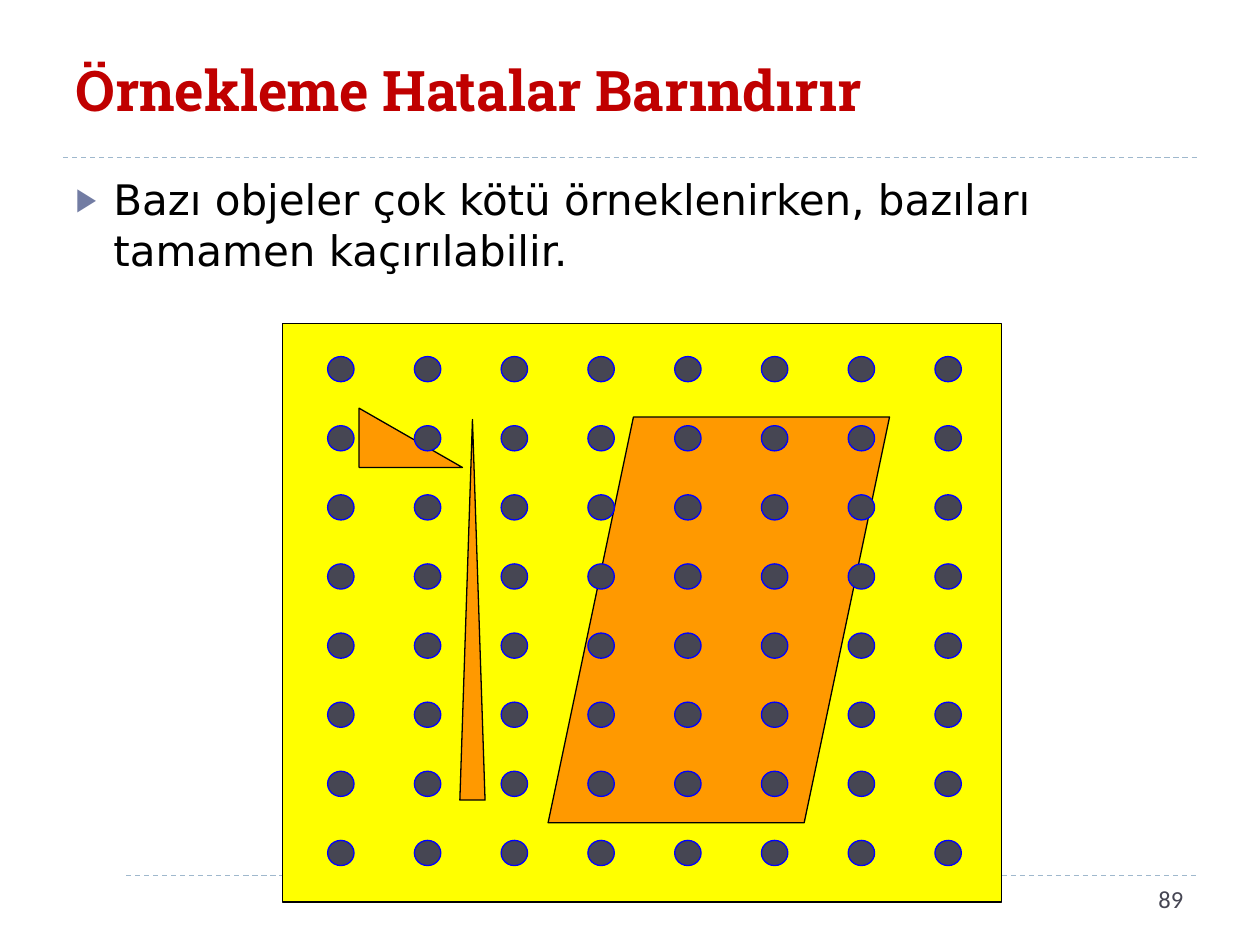
from itertools import product

from lxml import etree
from pptx import Presentation
from pptx.dml.color import RGBColor
from pptx.enum.dml import MSO_LINE
from pptx.enum.shapes import MSO_CONNECTOR, MSO_SHAPE
from pptx.enum.text import MSO_ANCHOR, MSO_AUTO_SIZE, PP_ALIGN
from pptx.oxml.ns import qn
from pptx.util import Inches, Pt

LEFT, RIGHT = PP_ALIGN.LEFT, PP_ALIGN.RIGHT
TOP, MIDDLE = MSO_ANCHOR.TOP, MSO_ANCHOR.MIDDLE
NO_FIT = MSO_AUTO_SIZE.NONE
STRAIGHT = MSO_CONNECTOR.STRAIGHT
DASH = MSO_LINE.DASH
RECT = MSO_SHAPE.RECTANGLE
RIGHT_TRI = MSO_SHAPE.RIGHT_TRIANGLE
TRI = MSO_SHAPE.ISOSCELES_TRIANGLE
SLANT = MSO_SHAPE.PARALLELOGRAM
OVAL = MSO_SHAPE.OVAL

COLORS = {
    "title": "C00000",
    "text": "000000",
    "number": "464653",
    "bullet": "727CA3",
    "rule": "9FB8CD",
    "field": "FFFF00",
    "object": "FF9900",
    "edge": "000000",
    "dot": "464653",
    "ring": "0000FF",
}


def color(name):
    return RGBColor.from_string(COLORS[name])


def place(shape, *box):
    shape.left, shape.top, shape.width, shape.height = map(Inches, box)


def set_text(shape, text, font, size, hue, bold=False, align=LEFT, anchor=TOP):
    frame = shape.text_frame
    frame.text = text
    frame.word_wrap = True
    frame.auto_size = NO_FIT
    frame.vertical_anchor = anchor
    para = frame.paragraphs[0]
    para.alignment = align
    para.space_before = Pt(0)
    face = para.runs[0].font
    face.name, face.size, face.bold = font, Pt(size), bold
    face.color.rgb = color(hue)
    return para


def add_bullet(para, char, hue, percent, indent):
    props = para._p.get_or_add_pPr()
    props.set("marL", str(Inches(indent)))
    props.set("indent", str(-Inches(indent)))
    tint = etree.SubElement(props, qn("a:buClr"))
    etree.SubElement(tint, qn("a:srgbClr"), val=COLORS[hue])
    etree.SubElement(props, qn("a:buSzPct"), val=str(percent * 1000))
    etree.SubElement(props, qn("a:buChar"), char=char)


def add_rule(slide, start, end, y):
    rule = slide.shapes.add_connector(
        STRAIGHT, Inches(start), Inches(y), Inches(end), Inches(y))
    rule.line.color.rgb = color("rule")
    rule.line.width = Pt(0.75)
    rule.line.dash_style = DASH
    etree.SubElement(rule._element.spPr, qn("a:effectLst"))


def add_form(group, kind, box, fill, line):
    form = group.shapes.add_shape(kind, *map(Inches, box))
    form.shadow.inherit = False
    form.fill.solid()
    form.fill.fore_color.rgb = color(fill)
    form.line.color.rgb = color(line)
    form.line.width = Pt(0.75)
    return form


def add_dots(group, left, top, right, bottom, count):
    step_x = (right - left) / (count - 1)
    step_y = (bottom - top) / (count - 1)
    for row, col in product(range(count), repeat=2):
        box = (left + col * step_x, top + row * step_y, 0.21, 0.2)
        add_form(group, OVAL, box, "dot", "ring")


def main():
    deck = Presentation()
    deck.slide_width, deck.slide_height = Inches(10), Inches(7.5)
    slide = deck.slides.add_slide(deck.slide_layouts[1])

    # Rules below the title and above the footer
    add_rule(slide, 1, 9.5, 6.95)
    add_rule(slide, 0.5, 9.5, 1.25)

    # Title
    title = slide.shapes.title
    place(title, 0.5, 0.17, 9, 1.08)
    set_text(title, "Örnekleme Hatalar Barındırır", "Roboto Slab", 32,
             "title", bold=True, anchor=MIDDLE)

    # Page number
    number = slide.shapes.add_textbox(0, 0, 0, 0)
    place(number, 7.16, 6.97, 2.33, 0.4)
    set_text(number, "89", "Calibri", 14, "number", align=RIGHT)

    # Body
    body = slide.placeholders[1]
    place(body, 0.5, 1.33, 9, 5.4)
    para = set_text(
        body,
        "Bazı objeler çok kötü örneklenirken, bazıları tamamen kaçırılabilir.",
        "DejaVu Sans", 24, "text")
    add_bullet(para, "▶", "bullet", 76, 0.3)

    # Field with the sampled objects
    group = slide.shapes.add_group_shape()
    add_form(group, RECT, (2.24, 2.57, 5.71, 4.59), "field", "edge")
    add_form(group, RIGHT_TRI, (2.85, 3.24, 0.82, 0.47), "object", "edge")
    add_form(group, TRI, (3.65, 3.33, 0.2, 3.02), "object", "edge")
    slant = add_form(group, SLANT, (4.35, 3.31, 2.71, 3.22), "object", "edge")
    slant.adjustments[0] = 0.25

    # Sample points
    add_dots(group, 2.6, 2.83, 7.42, 6.67, 8)

    deck.save("out.pptx")


if __name__ == "__main__":
    main()
